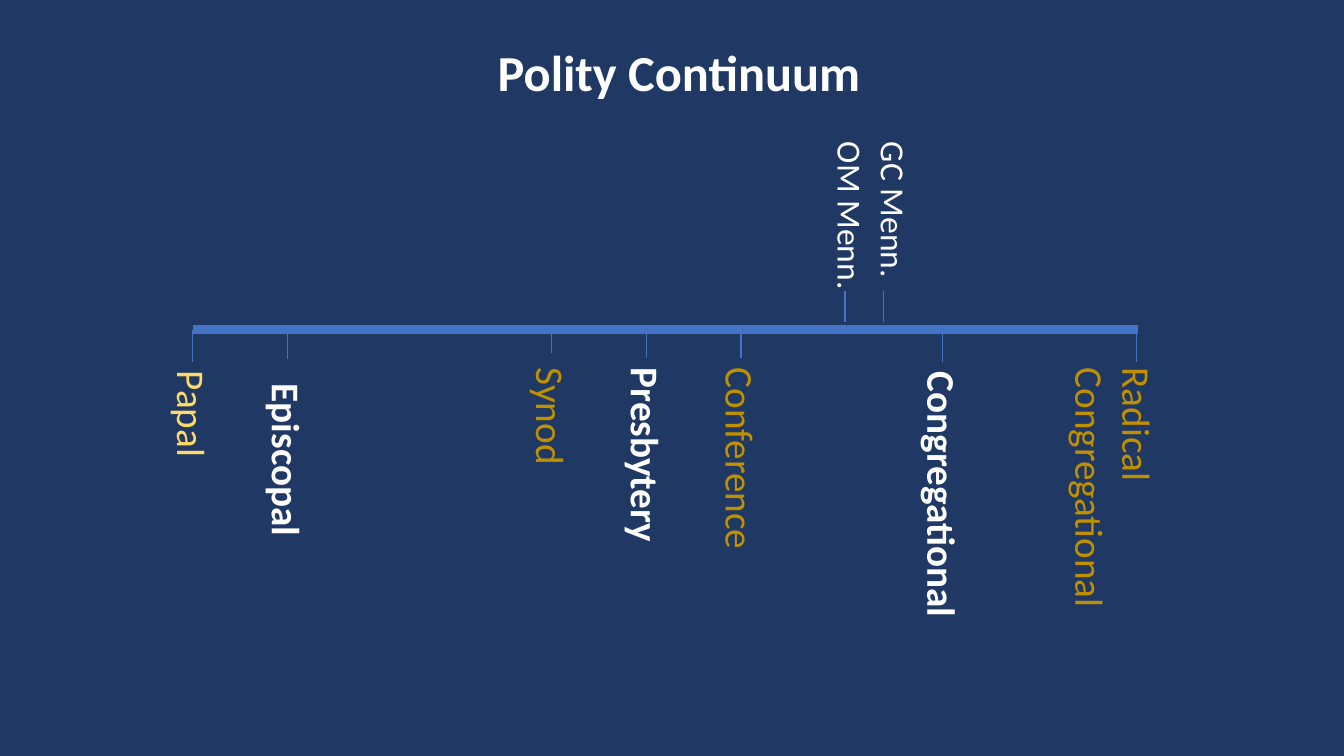
from dataclasses import dataclass

from pptx import Presentation
from pptx.dml.color import RGBColor
from pptx.enum.shapes import MSO_CONNECTOR
from pptx.enum.text import MSO_AUTO_SIZE, PP_ALIGN
from pptx.oxml import parse_xml
from pptx.oxml.ns import nsdecls
from pptx.slide import Slide
from pptx.util import Inches, Pt

COLORS = {
    "background": "203864",
    "line": "4472C4",
    "white": "FFFFFF",
    "gold": "BF9000",
    "yellow": "FFD966",
}
FONT = "Calibri"
AXIS_Y = 3.27
AXIS_LEFT, AXIS_RIGHT = 1.91, 11.29


@dataclass
class Label:
    """Text turned to read downwards: centre x, top and length on the slide."""
    text: str
    x: float
    top: float
    length: float
    color: str
    bold: bool = False
    size: int = 28
    thickness: float = 0.57
    wrap: bool = True


@dataclass
class Tick:
    x: float
    end: float
    start: float = AXIS_Y


LABELS = [
    Label("Papal", 1.91, 3.58, 1.95, "yellow"),
    Label("Episcopal", 2.85, 3.71, 1.73, "white", bold=True, wrap=False),
    Label("Synod", 5.47, 3.55, 1.42, "gold"),
    Label("Presbytery", 6.41, 3.55, 3.56, "white", bold=True),
    Label("Conference", 7.35, 3.55, 2.29, "gold"),
    Label("Congregational", 9.35, 3.59, 3.09, "white", bold=True),
    Label("Radical Congregational", 11.05, 3.55, 3.78, "gold", thickness=1.04),
    Label("OM Menn.", 8.44, 1.31, 1.73, "white", size=24, thickness=0.5),
    Label("GC Menn.", 8.87, 1.31, 1.73, "white", size=24, thickness=0.5),
]

TICKS = [
    Tick(1.91, 3.59),
    Tick(2.85, 3.56),
    Tick(5.47, 3.5),
    Tick(6.41, 3.55),
    Tick(7.35, 3.55),
    Tick(9.35, 3.59),
    Tick(11.27, 3.59),
    Tick(8.38, 2.89, start=3.19),
    Tick(8.76, 2.89, start=3.19),
]


def rgb(name: str) -> RGBColor:
    return RGBColor.from_string(COLORS[name])


def add_line(s: Slide, x1: float, y1: float, x2: float, y2: float, width: float) -> None:
    line = s.shapes.add_connector(
        MSO_CONNECTOR.STRAIGHT, Inches(x1), Inches(y1), Inches(x2), Inches(y2))
    line.line.color.rgb = rgb("line")
    line.line.width = Pt(width)
    line._element.spPr.append(parse_xml(f"<a:effectLst {nsdecls('a')}/>"))


def add_text(s: Slide, text: str, left: float, top: float, width: float, height: float,
             size: int, color: str, bold: bool = False, wrap: bool = True,
             align: PP_ALIGN = PP_ALIGN.LEFT, rotation: float = 0) -> None:
    sp = s.shapes.add_textbox(Inches(left), Inches(top), Inches(width), Inches(height))
    sp.rotation = rotation
    tf = sp.text_frame
    tf.word_wrap = wrap
    tf.auto_size = MSO_AUTO_SIZE.SHAPE_TO_FIT_TEXT
    p = tf.paragraphs[0]
    p.text = text
    p.alignment = align
    p.font.name = FONT
    p.font.size = Pt(size)
    p.font.bold = bold
    p.font.color.rgb = rgb(color)


def add_label(s: Slide, label: Label) -> None:
    # Rotation keeps the centre of the box in place
    left = label.x - label.length / 2
    top = label.top + (label.length - label.thickness) / 2
    add_text(s, label.text, left, top, label.length, label.thickness, label.size,
             label.color, label.bold, label.wrap, rotation=90)


def main() -> None:
    prs = Presentation()
    prs.slide_width, prs.slide_height = Inches(13.33), Inches(7.5)
    s = prs.slides.add_slide(prs.slide_layouts[6])
    s.background.fill.solid()
    s.background.fill.fore_color.rgb = rgb("background")

    # Title
    add_text(s, "Polity Continuum", 2.85, 0.36, 7.77, 0.71, 36, "white",
             bold=True, align=PP_ALIGN.CENTER)

    # Continuum axis and its ticks
    add_line(s, AXIS_LEFT, AXIS_Y, AXIS_RIGHT, AXIS_Y, 6)
    for tick in TICKS:
        add_line(s, tick.x, tick.start, tick.x, tick.end, 1)

    # Polity names
    for label in LABELS:
        add_label(s, label)

    prs.save("out.pptx")


if __name__ == "__main__":
    main()
